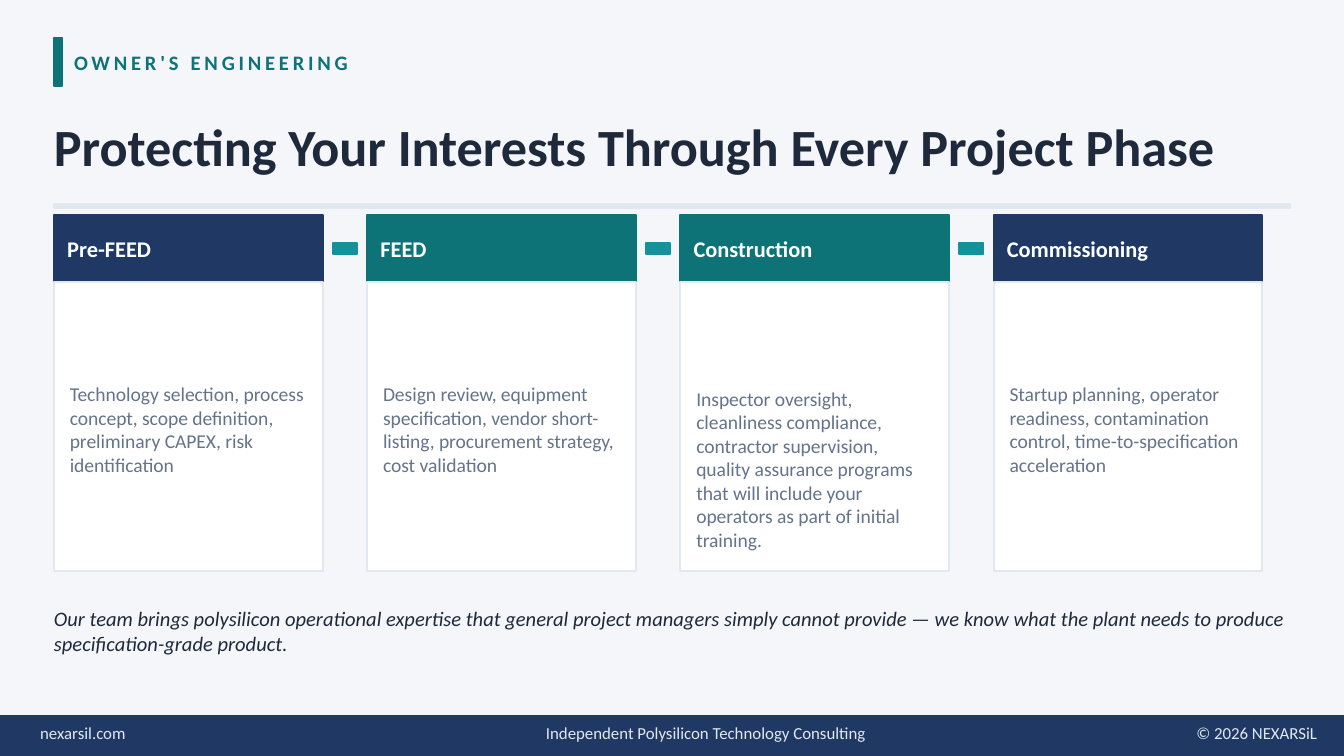
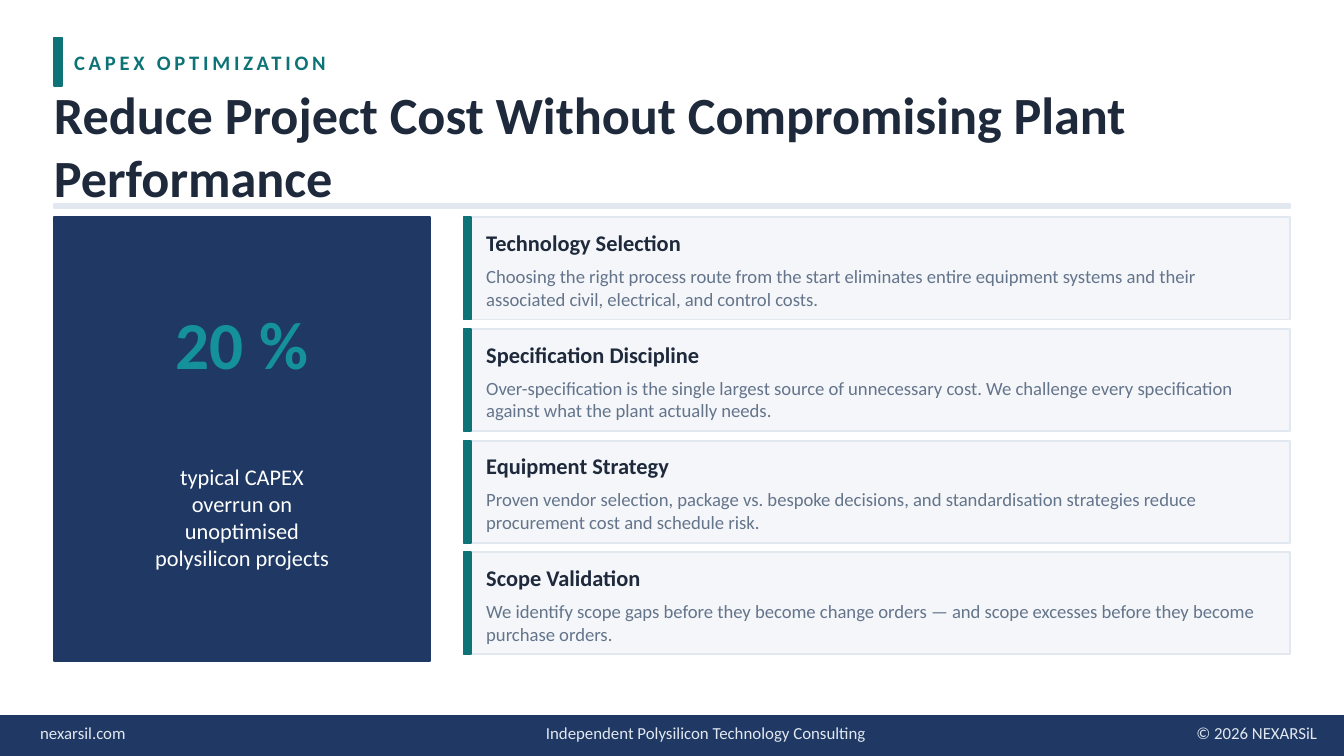
from dataclasses import dataclass
from typing import NamedTuple

from pptx import Presentation
from pptx import util as u
from pptx.dml.color import RGBColor
from pptx.enum import shapes, text

NAVY = RGBColor(0x1F, 0x38, 0x64)
TEAL = RGBColor(0x0D, 0x73, 0x77)
AQUA = RGBColor(0x14, 0x91, 0x9B)
INK = RGBColor(0x1E, 0x29, 0x3B)
SLATE = RGBColor(0x64, 0x74, 0x8B)
RULE = RGBColor(0xE2, 0xE8, 0xF0)
MIST = RGBColor(0xF4, 0xF6, 0xF9)
WHITE = RGBColor(0xFF, 0xFF, 0xFF)

FACE = "Calibri"
LEFT, CENTER, RIGHT = text.PP_ALIGN.LEFT, text.PP_ALIGN.CENTER, text.PP_ALIGN.RIGHT
WIDE, HIGH = 25.4, 14.29
EDGE, SPAN = 1.02, 23.37  # left margin and content width


class Box(NamedTuple):
    """Left, top, width and height in centimetres."""
    x: float
    y: float
    w: float
    h: float

    def cm(self) -> list:
        return [u.Cm(v) for v in self]


@dataclass(frozen=True)
class Style:
    size: float
    color: RGBColor
    bold: bool = False
    italic: bool = False
    align: text.PP_ALIGN = LEFT
    track: float = 0


@dataclass(frozen=True)
class Phase:
    name: str
    detail: str
    color: RGBColor
    drop: float = 0  # extra space above the detail


@dataclass(frozen=True)
class Lever:
    name: str
    detail: str


TAG = Style(11, TEAL, bold=True, track=2)
TITLE = Style(28, INK, bold=True)
HEAD = Style(12, WHITE, bold=True)
DETAIL = Style(10.5, SLATE)
NOTE = Style(11, INK, italic=True)
FIGURE = Style(36, AQUA, bold=True, align=CENTER)
CAPTION = Style(12, WHITE, align=CENTER)
NAME = Style(12, INK, bold=True)
REASON = Style(10, SLATE)

FOOTER = [
    ("nexarsil.com", Box(0.76, 13.53, 7.62, 0.66), LEFT),
    ("Independent Polysilicon Technology Consulting",
     Box(7.62, 13.53, 11.43, 0.66), CENTER),
    ("© 2026 NEXARSiL", Box(18.29, 13.53, 6.6, 0.66), RIGHT),
]

PHASES = [
    Phase("Pre-FEED", "Technology selection, process concept, scope definition, "
          "preliminary CAPEX, risk identification", NAVY),
    Phase("FEED", "Design review, equipment specification, vendor short-listing, "
          "procurement strategy, cost validation", TEAL),
    Phase("Construction", "Inspector oversight, cleanliness compliance, contractor "
          "supervision, quality assurance programs that will include your operators "
          "as part of initial training.", TEAL, drop=1.5),
    Phase("Commissioning", "Startup planning, operator readiness, contamination "
          "control, time-to-specification acceleration", NAVY),
]

LEVERS = [
    Lever("Technology Selection", "Choosing the right process route from the start "
          "eliminates entire equipment systems and their associated civil, "
          "electrical, and control costs."),
    Lever("Specification Discipline", "Over-specification is the single largest "
          "source of unnecessary cost. We challenge every specification against "
          "what the plant actually needs."),
    Lever("Equipment Strategy", "Proven vendor selection, package vs. bespoke "
          "decisions, and standardisation strategies reduce procurement cost and "
          "schedule risk."),
    Lever("Scope Validation", "We identify scope gaps before they become change "
          "orders — and scope excesses before they become purchase orders."),
]


def block(slide, box: Box, fill: RGBColor, line: RGBColor | None = None) -> None:
    """Draw a rectangle, outlined in its own colour unless told otherwise."""
    rect = slide.shapes.add_shape(shapes.MSO_SHAPE.RECTANGLE, *box.cm())
    rect.shadow.inherit = False
    rect.fill.solid()
    rect.fill.fore_color.rgb = fill
    rect.line.color.rgb = line or fill
    rect.line.width = u.Pt(1)


def write(frame, words: str, style: Style) -> None:
    """Fill a frame with one paragraph per line of words."""
    frame.text = words
    frame.word_wrap = True
    frame.auto_size = text.MSO_AUTO_SIZE.NONE
    frame.vertical_anchor = text.MSO_ANCHOR.MIDDLE
    frame.margin_left = frame.margin_right = 0
    frame.margin_top = frame.margin_bottom = 0
    for para in frame.paragraphs:
        para.alignment = style.align
        font = para.font
        font.name, font.size = FACE, u.Pt(style.size)
        font.bold, font.italic = style.bold, style.italic
        font.color.rgb = style.color
        if style.track:
            for run in para.runs:
                run._r.get_or_add_rPr().set("spc", str(int(style.track * 100)))


def label(slide, box: Box, words: str, style: Style) -> None:
    write(slide.shapes.add_textbox(*box.cm()).text_frame, words, style)


def start(deck, back: RGBColor, tag: str, title: str):
    """Add a slide with the shared background, heading and footer."""
    slide = deck.slides.add_slide(deck.slide_layouts[5])
    slide.background.fill.solid()
    slide.background.fill.fore_color.rgb = back

    head = slide.shapes.title
    head.left, head.top, head.width, head.height = Box(EDGE, 1.83, SPAN, 1.83).cm()
    write(head.text_frame, title, TITLE)

    block(slide, Box(EDGE, 0.71, 0.15, 0.91), TEAL)
    label(slide, Box(1.4, 0.66, 20.32, 1.02), tag, TAG)
    block(slide, Box(EDGE, 3.86, SPAN, 0.08), RULE)

    block(slide, Box(0, 13.53, WIDE, 0.76), NAVY)
    for words, box, align in FOOTER:
        label(slide, box, words, Style(9, RULE, align=align))
    return slide


def column(slide, x: float, phase: Phase) -> None:
    block(slide, Box(x, 4.06, 5.08, 1.27), phase.color)
    label(slide, Box(x + 0.25, 4.06, 4.83, 1.27), phase.name, HEAD)
    block(slide, Box(x, 5.33, 5.08, 5.46), WHITE, RULE)
    label(slide, Box(x + 0.3, 5.64 + phase.drop, 4.47, 4.95 - phase.drop),
          phase.detail, DETAIL)


def card(slide, y: float, lever: Lever) -> None:
    x = 8.76
    block(slide, Box(x, y, 15.62, 1.93), MIST, RULE)
    block(slide, Box(x, y, 0.15, 1.93), TEAL)
    label(slide, Box(x + 0.43, y + 0.15, 14.86, 0.66), lever.name, NAME)
    label(slide, Box(x + 0.43, y + 0.84, 14.86, 0.97), lever.detail, REASON)


def phases(deck) -> None:
    slide = start(deck, MIST, "OWNER'S ENGINEERING",
                  "Protecting Your Interests Through Every Project Phase")
    step = 5.92
    for i, phase in enumerate(PHASES):
        x = EDGE + i * step
        if i:
            block(slide, Box(x - 0.65, 4.6, 0.46, 0.2), AQUA)
        column(slide, x, phase)
    label(slide, Box(EDGE, 11.23, SPAN, 1.4),
          "Our team brings polysilicon operational expertise that general project "
          "managers simply cannot provide — we know what the plant needs to produce "
          "specification-grade product.", NOTE)


def savings(deck) -> None:
    slide = start(deck, WHITE, "CAPEX OPTIMIZATION",
                  "Reduce Project Cost Without Compromising Plant Performance")
    block(slide, Box(EDGE, 4.11, 7.11, 8.38), NAVY)
    label(slide, Box(EDGE, 5.08, 7.11, 2.79), "20 %", FIGURE)
    label(slide, Box(EDGE, 7.87, 7.11, 3.81),
          "typical CAPEX\noverrun on\nunoptimised\npolysilicon projects", CAPTION)
    for i, lever in enumerate(LEVERS):
        card(slide, 4.11 + i * 2.11, lever)


def main() -> None:
    deck = Presentation()
    deck.slide_width, deck.slide_height = u.Cm(WIDE), u.Cm(HIGH)
    phases(deck)
    savings(deck)
    deck.save("out.pptx")


if __name__ == "__main__":
    main()
